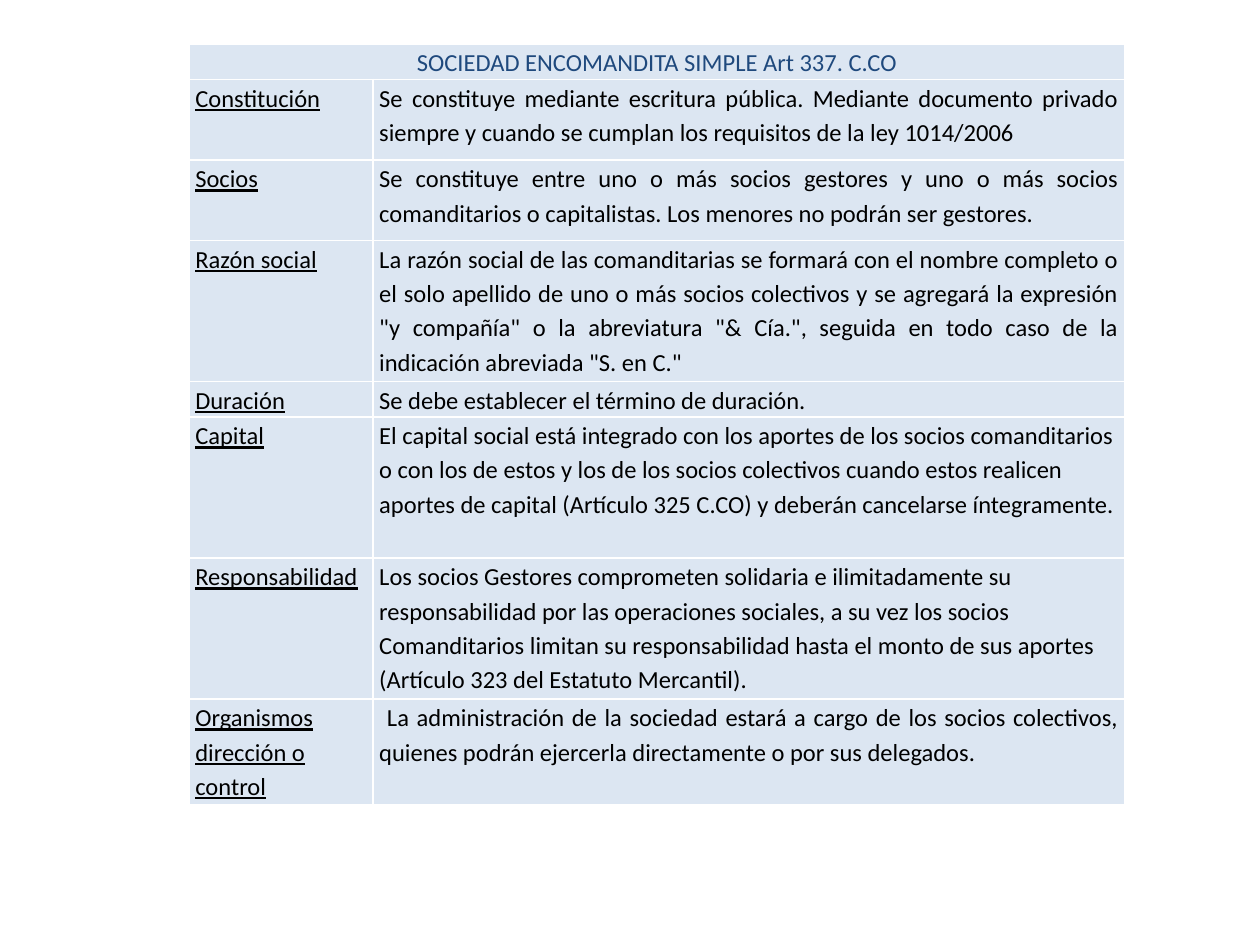
from typing import NamedTuple

from lxml.etree import SubElement
from pptx import Presentation
from pptx.dml.color import RGBColor
from pptx.enum.text import PP_ALIGN
from pptx.oxml.ns import qn
from pptx.table import _Cell
from pptx.util import Inches, Pt

PALE = RGBColor(0xDC, 0xE6, 0xF2)
NAVY = RGBColor(0x1F, 0x49, 0x7D)
BLACK = RGBColor(0, 0, 0)
WHITE = RGBColor(0xFF, 0xFF, 0xFF)
LEFT, CENTER, JUSTIFY = PP_ALIGN.LEFT, PP_ALIGN.CENTER, PP_ALIGN.JUSTIFY


class Topic(NamedTuple):
    label: str
    body: str
    height: float
    align: PP_ALIGN = JUSTIFY


TITLE = "SOCIEDAD ENCOMANDITA SIMPLE Art 337. C.CO"
TOP = 0.28
COLS = (1.46, 5.97)
TOPICS = (
    Topic("Constitución",
          "Se constituye mediante escritura pública. Mediante documento privado "
          "siempre y cuando se cumplan los requisitos de la ley 1014/2006", 0.64),
    Topic("Socios",
          "Se constituye entre uno o más socios gestores y uno o más socios "
          "comanditarios o capitalistas. Los menores no podrán ser gestores.", 0.64),
    Topic("Razón social",
          "La razón social de las comanditarias se formará con el nombre completo o "
          "el solo apellido de uno o más socios colectivos y se agregará la expresión "
          '"y compañía" o la abreviatura "& Cía.", seguida en todo caso de la '
          'indicación abreviada "S. en C."', 1.12),
    Topic("Duración", "Se debe establecer el término de duración.", 0.28),
    Topic("Capital",
          "El capital social está integrado con los aportes de los socios comanditarios "
          "o con los de estos y los de los socios colectivos cuando estos realicen "
          "aportes de capital (Artículo 325 C.CO) y deberán cancelarse íntegramente.",
          1.12, LEFT),
    Topic("Responsabilidad",
          "Los socios Gestores comprometen solidaria e ilimitadamente su "
          "responsabilidad por las operaciones sociales, a su vez los socios "
          "Comanditarios limitan su responsabilidad hasta el monto de sus aportes "
          "(Artículo 323 del Estatuto Mercantil).", 1.12, LEFT),
    Topic("Organismos dirección o control",
          " La administración de la sociedad estará a cargo de los socios colectivos, "
          "quienes podrán ejercerla directamente o por sus delegados.", 0.84),
)


def style(cell: _Cell) -> None:
    cell.margin_left = cell.margin_right = Inches(0.05)
    cell.margin_top = cell.margin_bottom = Inches(0)
    props = cell._tc.get_or_add_tcPr()
    for side in ("a:lnL", "a:lnR", "a:lnT", "a:lnB"):
        line = SubElement(props, qn(side), w=str(Pt(1)))
        fill = SubElement(line, qn("a:solidFill"))
        SubElement(fill, qn("a:srgbClr"), val=str(WHITE))
    cell.fill.solid()
    cell.fill.fore_color.rgb = PALE


def write(cell: _Cell, text: str, align: PP_ALIGN,
          color: RGBColor = BLACK, under: bool = False) -> None:
    para = cell.text_frame.paragraphs[0]
    para.alignment = align
    para.line_spacing = 1.15
    run = para.add_run()
    run.text = text
    run.font.name = "Calibri"
    run.font.size = Pt(14)
    run.font.bold = False
    run.font.underline = under
    run.font.color.rgb = color


def main() -> None:
    deck = Presentation()
    deck.slide_width, deck.slide_height = Inches(10), Inches(7.5)
    slide = deck.slides.add_slide(deck.slide_layouts[6])
    heights = [TOP] + [topic.height for topic in TOPICS]
    table = slide.shapes.add_table(
        len(heights), len(COLS), Inches(1.5), Inches(0.35),
        Inches(sum(COLS)), Inches(sum(heights))).table
    for col, width in zip(table.columns, COLS):
        col.width = Inches(width)
    for row, height in zip(table.rows, heights):
        row.height = Inches(height)
    for cell in table.iter_cells():
        style(cell)
    table.cell(0, 0).merge(table.cell(0, 1))
    write(table.cell(0, 0), TITLE, CENTER, NAVY)
    for index, topic in enumerate(TOPICS, 1):
        side = LEFT if " " in topic.label else JUSTIFY
        write(table.cell(index, 0), topic.label, side, under=True)
        write(table.cell(index, 1), topic.body, topic.align)
    deck.save("out.pptx")


if __name__ == "__main__":
    main()
